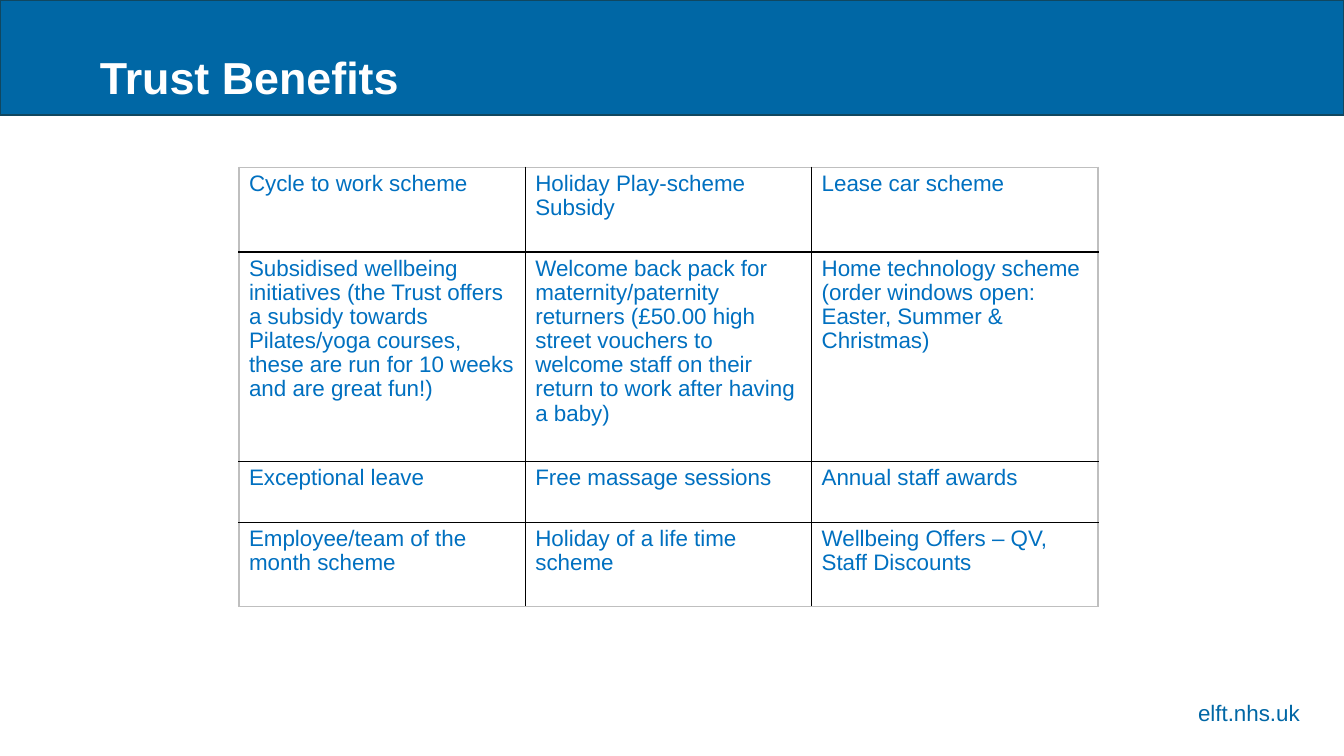
from dataclasses import dataclass

from lxml import etree
from pptx import Presentation
from pptx import util as u
from pptx.dml.color import RGBColor
from pptx.enum import shapes, text
from pptx.oxml import ns
from pptx.slide import Slide
from pptx.table import _Cell
from pptx.text.text import _Paragraph


@dataclass(frozen=True)
class Theme:
    font: str = "Arial"
    banner: str = "0067A5"
    banner_line: str = "104760"
    title: str = "FFFFFF"
    background: str = "FFFFFF"
    body: str = "0070C0"
    inner_border: str = "000000"
    outer_border: str = "BFBFBF"
    title_size: int = 32
    body_size: int = 16


@dataclass(frozen=True)
class BenefitRow:
    height: float
    benefits: tuple[str, str, str]


THEME = Theme()
COLUMN_WIDTH = 2.84
ROWS = (
    BenefitRow(0.84, (
        "Cycle to work scheme",
        "Holiday Play-scheme Subsidy",
        "Lease car scheme",
    )),
    BenefitRow(2.08, (
        "Subsidised wellbeing initiatives (the Trust offers a subsidy towards "
        "Pilates/yoga courses, these are run for 10 weeks and are great fun!)",
        "Welcome back pack for maternity/paternity returners (£50.00 high street "
        "vouchers to welcome staff on their return to work after having a baby)",
        "Home technology scheme (order windows open: Easter, Summer & Christmas)",
    )),
    BenefitRow(0.6, (
        "Exceptional leave",
        "Free massage sessions",
        "Annual staff awards",
    )),
    BenefitRow(0.84, (
        "Employee/team of the month scheme",
        "Holiday of a life time scheme",
        "Wellbeing Offers – QV, Staff Discounts",
    )),
)


def style_paragraph(paragraph: _Paragraph, size: int, color: str,
                    align: text.PP_ALIGN = text.PP_ALIGN.LEFT, bold: bool = False) -> None:
    paragraph.alignment = align
    paragraph.font.name = THEME.font
    paragraph.font.size = u.Pt(size)
    paragraph.font.bold = bold
    paragraph.font.color.rgb = RGBColor.from_string(color)


def add_banner(slide: Slide) -> None:
    """Draw the header band behind the title."""
    banner = slide.shapes.add_shape(shapes.MSO_SHAPE.RECTANGLE, 0, 0,
                                    u.Inches(13.33), u.Inches(1.14))
    banner.shadow.inherit = False
    banner.fill.solid()
    banner.fill.fore_color.rgb = RGBColor.from_string(THEME.banner)
    banner.line.color.rgb = RGBColor.from_string(THEME.banner_line)
    banner.line.width = u.Pt(1.5)
    slide.shapes.title.element.addprevious(banner.element)


def set_title(slide: Slide, wording: str) -> None:
    title = slide.shapes.title
    title.left, title.top = u.Inches(0.89), u.Inches(0.41)
    title.width, title.height = u.Inches(9.35), u.Inches(0.7)
    title.text_frame.text = wording
    title.text_frame.vertical_anchor = text.MSO_ANCHOR.MIDDLE
    style_paragraph(title.text_frame.paragraphs[0], THEME.title_size, THEME.title, bold=True)


def add_web_address(slide: Slide, address: str) -> None:
    box = slide.shapes.add_textbox(u.Inches(11.17), u.Inches(6.89),
                                   u.Inches(1.82), u.Inches(0.37))
    box.text_frame.word_wrap = True
    box.text_frame.text = address
    style_paragraph(box.text_frame.paragraphs[0], THEME.body_size, THEME.banner,
                    text.PP_ALIGN.RIGHT)


def set_borders(cell: _Cell, outer_sides: dict[str, bool]) -> None:
    """Draw all four sides, grey where the side is on the table's edge."""
    properties = cell._tc.get_or_add_tcPr()
    for position, (side, is_outer) in enumerate(outer_sides.items()):
        line = etree.Element(ns.qn(f"a:{side}"), w=str(u.Pt(1)))
        fill = etree.SubElement(line, ns.qn("a:solidFill"))
        color = THEME.outer_border if is_outer else THEME.inner_border
        etree.SubElement(fill, ns.qn("a:srgbClr"), val=color)
        properties.insert(position, line)


def add_benefits_table(slide: Slide, rows: tuple[BenefitRow, ...]) -> None:
    column_count = len(rows[0].benefits)
    table = slide.shapes.add_table(
        len(rows), column_count, u.Inches(2.37), u.Inches(1.66),
        u.Inches(COLUMN_WIDTH * column_count),
        u.Inches(sum(row.height for row in rows))).table
    table.first_row = table.horz_banding = False
    for column in table.columns:
        column.width = u.Inches(COLUMN_WIDTH)
    for row_index, row in enumerate(rows):
        table.rows[row_index].height = u.Inches(row.height)
        for column_index, benefit in enumerate(row.benefits):
            cell = table.cell(row_index, column_index)
            cell.text = benefit
            cell.fill.solid()
            cell.fill.fore_color.rgb = RGBColor.from_string(THEME.background)
            paragraph = cell.text_frame.paragraphs[0]
            paragraph.line_spacing = 0.97
            style_paragraph(paragraph, THEME.body_size, THEME.body)
            set_borders(cell, {
                "lnL": column_index == 0,
                "lnR": column_index == column_count - 1,
                "lnT": row_index == 0,
                "lnB": row_index == len(rows) - 1,
            })


def main() -> None:
    presentation = Presentation()
    presentation.slide_width, presentation.slide_height = u.Inches(13.33), u.Inches(7.5)
    title_only_layout = presentation.slide_layouts[5]
    slide = presentation.slides.add_slide(title_only_layout)
    add_banner(slide)
    set_title(slide, "Trust Benefits")
    add_benefits_table(slide, ROWS)
    add_web_address(slide, "elft.nhs.uk")
    presentation.save("out.pptx")


if __name__ == "__main__":
    main()
